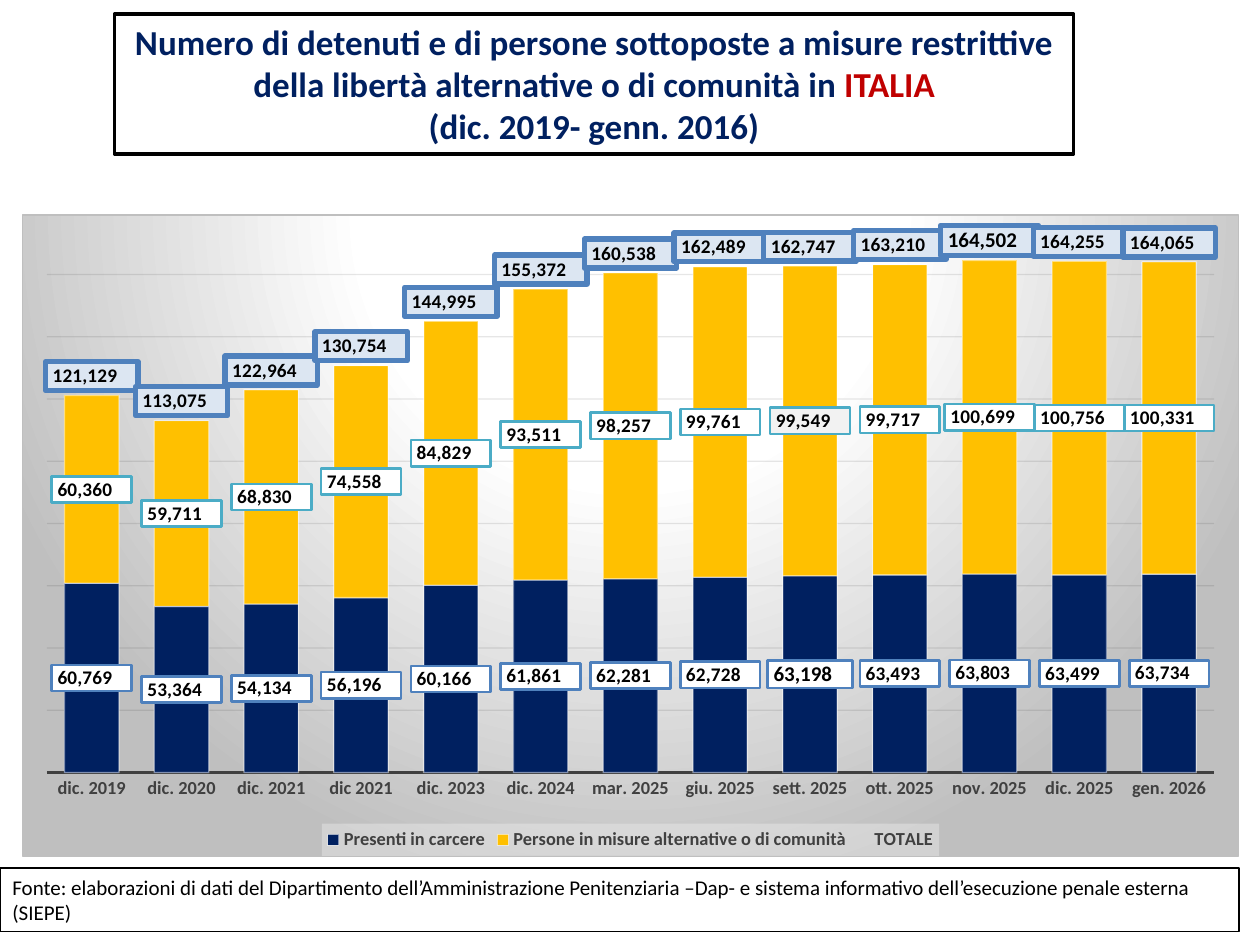
from typing import NamedTuple

from pptx import Presentation
from pptx.chart.data import CategoryChartData
from pptx.dml.color import RGBColor
from pptx.enum.chart import (XL_CHART_TYPE, XL_LABEL_POSITION,
                             XL_LEGEND_POSITION, XL_TICK_MARK)
from pptx.enum.text import MSO_ANCHOR, PP_ALIGN
from pptx.oxml import parse_xml
from pptx.oxml.ns import nsdecls
from pptx.util import Pt

STACKED = XL_CHART_TYPE.COLUMN_STACKED
CENTER, BASE = XL_LABEL_POSITION.CENTER, XL_LABEL_POSITION.INSIDE_BASE
BOTTOM = XL_LEGEND_POSITION.BOTTOM
NO_TICK = XL_TICK_MARK.NONE
MIDDLE = MSO_ANCHOR.MIDDLE
MID = PP_ALIGN.CENTER

NAVY = RGBColor(0x00, 0x20, 0x60)
GOLD = RGBColor(0xFF, 0xC0, 0x00)
RED = RGBColor(0xC0, 0x00, 0x00)
BLACK = RGBColor(0x00, 0x00, 0x00)
WHITE = RGBColor(0xFF, 0xFF, 0xFF)
DARK = RGBColor(0x40, 0x40, 0x40)
INK = RGBColor(0x0D, 0x0D, 0x0D)
PALE = RGBColor(0xF2, 0xF2, 0xF2)
GRAY = RGBColor(0xBF, 0xBF, 0xBF)
ICE = RGBColor(0xDC, 0xE6, 0xF2)
BLUE = RGBColor(0x4F, 0x81, 0xBD)
TEAL = RGBColor(0x4B, 0xAC, 0xC6)

FACE = "Calibri"
NUMBER = '_-* #,##0\\ _€_-;\\-* #,##0\\ _€_-;_-* "-"?'


class Tag(NamedTuple):
    fill: RGBColor
    line: RGBColor
    width: float
    place: XL_LABEL_POSITION


class Stack(NamedTuple):
    name: str
    color: RGBColor | None
    tag: Tag
    values: tuple[int, ...]


class Special(NamedTuple):
    """A single data label that differs from the rest of its series."""
    stack: int
    point: int
    size: float
    fill: RGBColor


DATES = ("dic. 2019", "dic. 2020", "dic. 2021", "dic 2021", "dic. 2023",
         "dic. 2024", "mar. 2025", "giu. 2025", "sett. 2025", "ott. 2025",
         "nov. 2025", "dic. 2025", "gen. 2026")
STACKS = (
    Stack("Presenti in carcere", NAVY, Tag(WHITE, BLUE, 1.5, CENTER),
          (60769, 53364, 54134, 56196, 60166, 61861, 62281, 62728, 63198,
           63493, 63803, 63499, 63734)),
    Stack("Persone in misure alternative o di comunità", GOLD,
          Tag(WHITE, TEAL, 1.5, CENTER),
          (60360, 59711, 68830, 74558, 84829, 93511, 98257, 99761, 99549,
           99717, 100699, 100756, 100331)),
    Stack("TOTALE", None, Tag(ICE, BLUE, 3, BASE),
          (121129, 113075, 122964, 130754, 144995, 155372, 160538, 162489,
           162747, 163210, 164502, 164255, 164065)),
)
SPECIALS = (Special(0, 8, 12, WHITE), Special(1, 8, 11, PALE),
            Special(2, 10, 12, ICE))


def style(font, size: float, color: RGBColor, bold: bool = False) -> None:
    font.name, font.size, font.bold = FACE, Pt(size), bold
    font.color.rgb = color


def frame(shape, width: float) -> None:
    shape.fill.solid()
    shape.fill.fore_color.rgb = WHITE
    shape.line.color.rgb = BLACK
    shape.line.width = Pt(width)
    shape.text_frame.word_wrap = True


def fade(node, share: int) -> None:
    """Give every colour below node an opacity in percent."""
    for color in node.xpath(".//a:srgbClr"):
        color.append(parse_xml(
            f'<a:alpha {nsdecls("a")} val="{share * 1000}"/>'))


def box(fill: str, line: str = ""):
    return parse_xml(f'<c:spPr {nsdecls("c", "a")}>{fill}{line}</c:spPr>')


def solid(color: RGBColor) -> str:
    return f'<a:solidFill><a:srgbClr val="{color}"/></a:solidFill>'


def edge(color: RGBColor, width: float) -> str:
    return f'<a:ln w="{Pt(width)}">{solid(color)}</a:ln>'


def add_title(slide) -> None:
    title = slide.shapes.title
    title.left, title.top = Pt(65.5), Pt(8)
    title.width, title.height = Pt(548), Pt(80)
    frame(title, 2)
    text = title.text_frame
    text.vertical_anchor = MIDDLE
    first, last = text.paragraphs[0], text.add_paragraph()
    first.add_run().text = ("Numero di detenuti e di persone sottoposte a "
                            "misure restrittive della libertà alternative "
                            "o di comunità in ")
    place = first.add_run()
    place.text = "ITALIA"
    last.text = "(dic. 2019- genn. 2016)"
    for para in (first, last):
        para.alignment = MID
        style(para.font, 20, NAVY, True)
    place.font.color.rgb = RED


def add_source(slide) -> None:
    note = slide.shapes.add_textbox(Pt(0), Pt(496), Pt(708), Pt(36.5))
    frame(note, 0.75)
    para = note.text_frame.paragraphs[0]
    para.text = ("Fonte: elaborazioni di dati del Dipartimento "
                 "dell’Amministrazione Penitenziaria –Dap- e sistema "
                 "informativo dell’esecuzione penale esterna (SIEPE)")
    style(para.font, 12, BLACK)


def style_stack(series, stack: Stack) -> None:
    if stack.color is None:
        series.format.fill.background()
    else:
        series.format.fill.solid()
        series.format.fill.fore_color.rgb = stack.color
        series.format.line.color.rgb = WHITE
        series.format.line.width = Pt(0.75)
        fade(series.format.line._ln, 50)
    tag, labels = stack.tag, series.data_labels
    labels.show_value = True
    labels.number_format = NUMBER
    labels.number_format_is_linked = False
    labels.position = tag.place
    style(labels.font, 11, BLACK, True)
    labels._element.xpath("c:txPr")[0].addprevious(
        box(solid(tag.fill), edge(tag.line, tag.width)))


def style_point(series, mark: Special) -> None:
    tag = STACKS[mark.stack].tag
    label = series.points[mark.point].data_label
    style(label.font, mark.size, BLACK, True)
    label.position = tag.place
    labels = series.data_labels._element
    text = labels.xpath(f'c:dLbl[c:idx/@val="{mark.point}"]/c:txPr')[0]
    for old in text.getparent().xpath("c:numFmt | c:spPr"):
        text.getparent().remove(old)
    form = parse_xml(f'<c:numFmt {nsdecls("c")} sourceLinked="0"/>')
    form.set("formatCode", NUMBER)
    text.addprevious(form)
    text.addprevious(box(solid(mark.fill), edge(tag.line, tag.width)))


def style_axes(chart) -> None:
    dates, count = chart.category_axis, chart.value_axis
    dates.major_tick_mark = dates.minor_tick_mark = NO_TICK
    dates.format.line.color.rgb = DARK
    dates.format.line.width = Pt(1.5)
    style(dates.tick_labels.font, 10.5, DARK, True)
    count.visible = False
    count.minimum_scale, count.maximum_scale = 0, 175000
    count.major_unit = 20000
    count.has_major_gridlines = True
    grid = count.major_gridlines.format.line
    grid.color.rgb = INK
    grid.width = Pt(0.75)
    fade(grid._ln, 10)


def style_area(chart) -> None:
    """Set the backdrop, the legend and the place of the plot."""
    root = chart.element
    stops = "".join(
        f'<a:gs pos="{pos * 1000}"><a:srgbClr val="{color}"/></a:gs>'
        for pos, color in ((0, WHITE), (39, WHITE), (100, GRAY)))
    glow = (f'<a:gradFill><a:gsLst>{stops}</a:gsLst><a:path path="circle">'
            '<a:fillToRect l="50000" t="-80000" r="50000" b="180000"/>'
            '</a:path></a:gradFill>')
    root.xpath("c:chart")[0].addnext(box(glow, edge(GRAY, 0.75)))

    chart.has_legend = True
    chart.legend.position = BOTTOM
    chart.legend.include_in_layout = False
    style(chart.legend.font, 10.5, DARK, True)
    back = box(solid(PALE))
    fade(back, 39)
    root.xpath(".//c:legend/c:txPr")[0].addprevious(back)

    plot = root.xpath(".//c:plotArea")[0]
    for old in plot.xpath("c:layout"):
        plot.remove(old)
    sides = "".join(f'<c:{key} val="{val}"/>' for key, val in (
        ("layoutTarget", "inner"), ("xMode", "edge"), ("yMode", "edge"),
        ("x", 0.02), ("y", 0.02), ("w", 0.96), ("h", 0.85)))
    plot.insert(0, parse_xml(f'<c:layout {nsdecls("c")}><c:manualLayout>'
                             f'{sides}</c:manualLayout></c:layout>'))


def add_bars(slide) -> None:
    data = CategoryChartData()
    data.categories = DATES
    for stack in STACKS:
        data.add_series(stack.name, stack.values)
    chart = slide.shapes.add_chart(STACKED, Pt(12.5), Pt(122.5), Pt(695.5),
                                   Pt(367), data).chart
    chart.has_title = False
    style(chart.font, 10, BLACK)
    bars = chart.plots[0]
    bars.gap_width, bars.overlap = 65, 100
    bars.vary_by_categories = False
    for series, stack in zip(bars.series, STACKS):
        style_stack(series, stack)
    for mark in SPECIALS:
        style_point(bars.series[mark.stack], mark)
    style_axes(chart)
    style_area(chart)


def main() -> None:
    deck = Presentation()
    deck.slide_width, deck.slide_height = Pt(720), Pt(540)
    slide = deck.slides.add_slide(deck.slide_layouts[5])
    add_title(slide)
    add_source(slide)
    add_bars(slide)
    deck.save("out.pptx")


if __name__ == "__main__":
    main()
